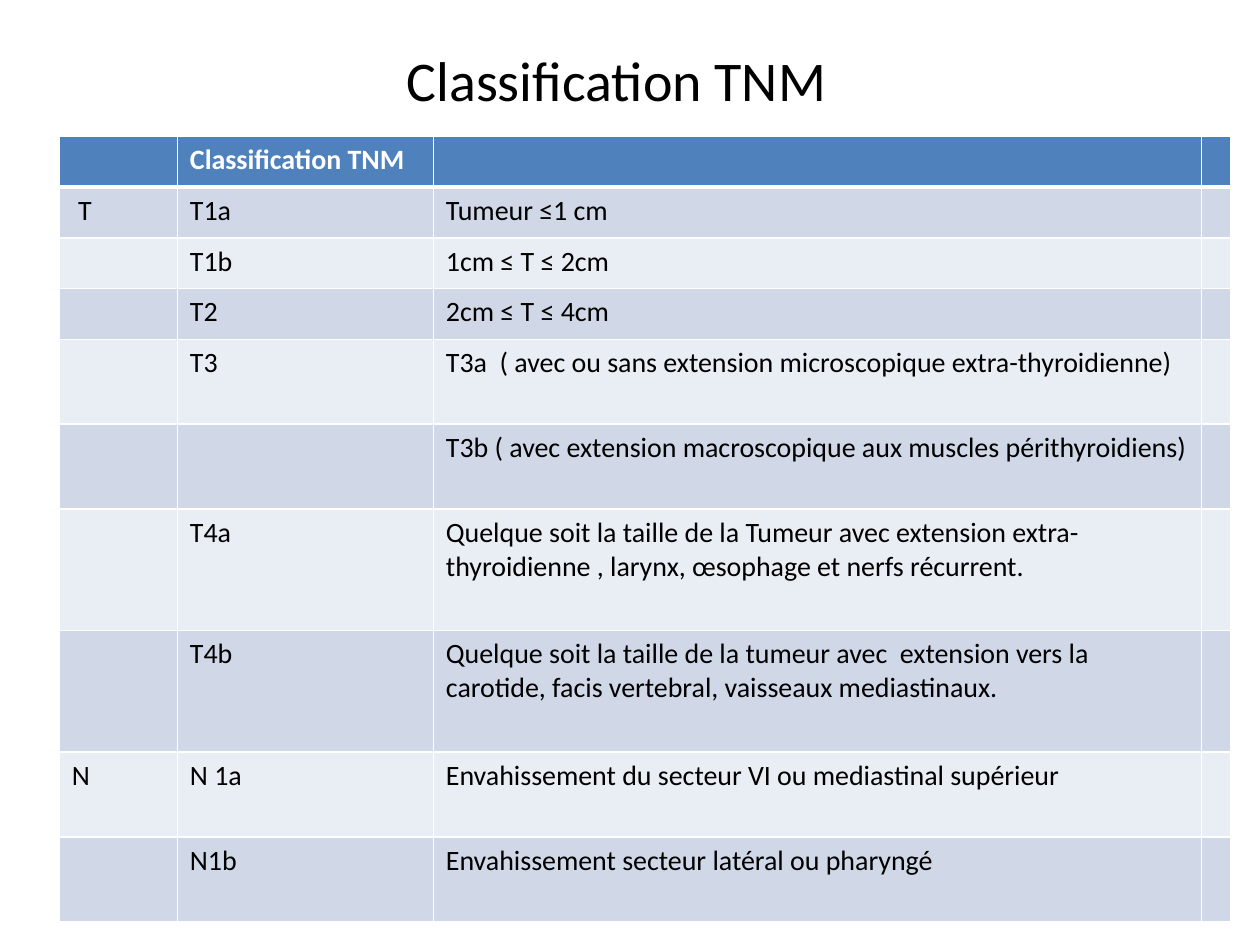
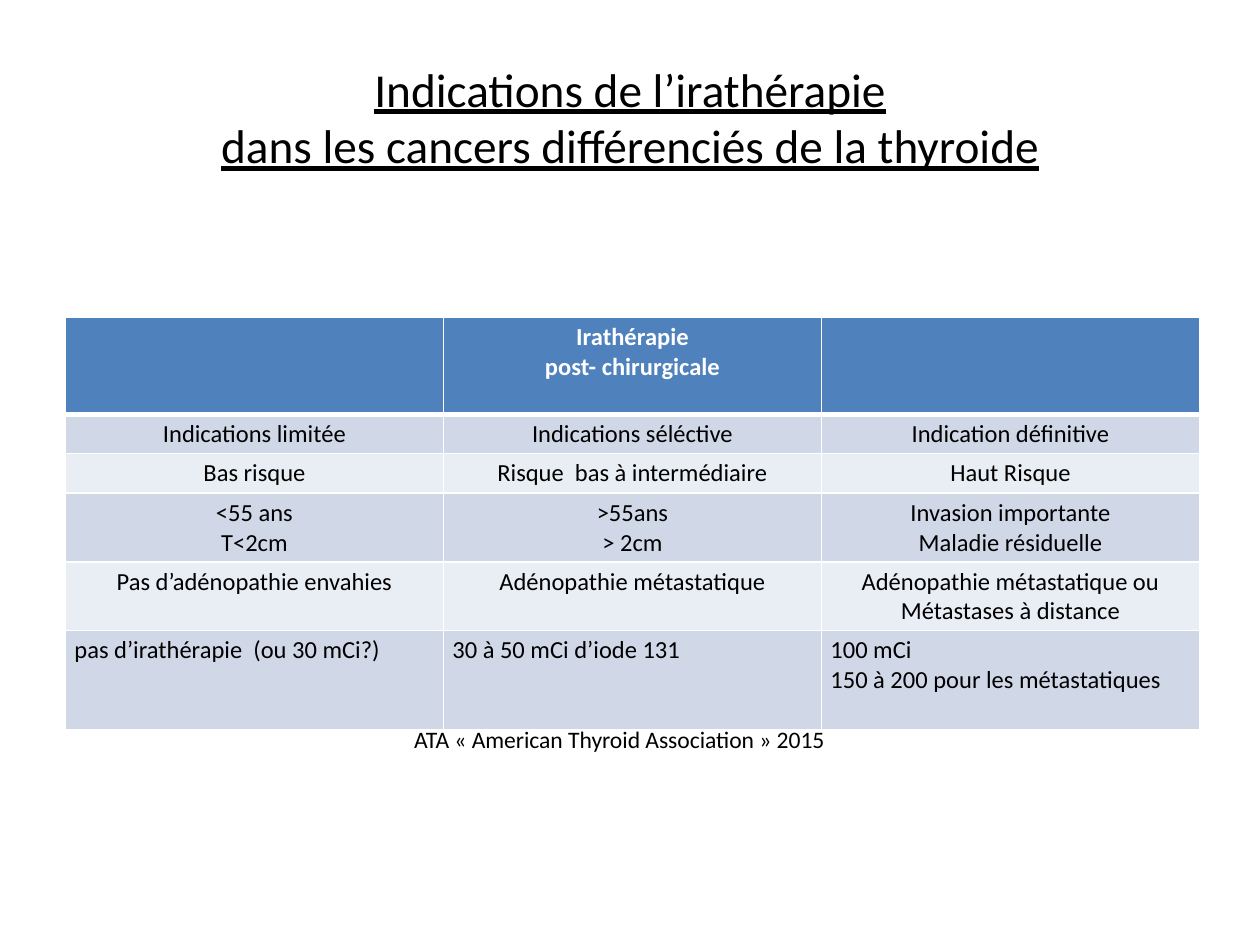
from dataclasses import dataclass

from lxml.etree import SubElement
from pptx import Presentation
from pptx.dml.color import RGBColor
from pptx.enum.text import MSO_ANCHOR, PP_ALIGN
from pptx.oxml.ns import qn
from pptx.util import Cm, Pt


@dataclass(frozen=True)
class Theme:
    font: str = "Calibri"
    ink: str = "000000"
    paper: str = "FFFFFF"
    head: str = "4F81BD"
    bands: tuple = ("D0D8E8", "E9EDF4")
    title: float = 32
    subtitle: float = 27
    stage: float = 16
    dose: float = 14
    source: float = 13.5
    rule: float = 1
    thick: float = 3


THEME = Theme()

STAGES = [
    ["", "Classification TNM", "", ""],
    [" T", "T1a", "Tumeur ≤1 cm", ""],
    ["", "T1b", "1cm ≤ T ≤ 2cm", ""],
    ["", "T2", "2cm ≤ T ≤ 4cm", ""],
    ["", "T3", "T3a  ( avec ou sans extension microscopique "
     "extra-thyroidienne)", ""],
    ["", "", "T3b ( avec extension macroscopique aux muscles "
     "périthyroidiens)", ""],
    ["", "T4a", "Quelque soit la taille de la Tumeur avec extension "
     "extra-thyroidienne , larynx, œsophage et nerfs récurrent.", ""],
    ["", "T4b", "Quelque soit la taille de la tumeur avec  extension vers la "
     "carotide, facis vertebral, vaisseaux mediastinaux.", ""],
    ["N", "N 1a", "Envahissement du secteur VI ou mediastinal supérieur", ""],
    ["", "N1b", "Envahissement secteur latéral ou pharyngé", ""],
]

DOSES = [
    ["", "Irathérapie\npost- chirurgicale", ""],
    ["Indications limitée", "Indications séléctive", "Indication définitive"],
    ["Bas risque", "Risque  bas à intermédiaire", "Haut Risque"],
    ["<55 ans\nT<2cm", ">55ans\n> 2cm",
     "Invasion importante\nMaladie résiduelle"],
    ["Pas d’adénopathie envahies", "Adénopathie métastatique",
     "Adénopathie métastatique ou\nMétastases à distance"],
    ["pas d’irathérapie  (ou 30 mCi?)", "30 à 50 mCi d’iode 131",
     "100 mCi\n150 à 200 pour les métastatiques"],
]


def write(frame, text, size, color=THEME.ink, bold=False, line=False,
          align=PP_ALIGN.LEFT):
    """Fill a text frame: \\n starts a paragraph, \\v breaks a line."""
    frame.text = text
    for para in frame.paragraphs:
        para.alignment = align
        for run in para.runs:
            font = run.font
            font.name, font.size = THEME.font, Pt(size)
            font.bold, font.underline = bold, line
            font.color.rgb = RGBColor.from_string(color)


def add_text(slide, text, left, top, width, height, anchor=MSO_ANCHOR.TOP,
             **style):
    box = slide.shapes.add_textbox(Cm(left), Cm(top), Cm(width), Cm(height))
    box.text_frame.word_wrap = True
    box.text_frame.vertical_anchor = anchor
    write(box.text_frame, text, **style)


def add_title(slide, text, left, top, **style):
    add_text(slide, text, left, top, 22.86, 3.18, anchor=MSO_ANCHOR.MIDDLE,
             align=PP_ALIGN.CENTER, **style)


def edge(cell, side, width):
    props = cell._tc.get_or_add_tcPr()
    rule = SubElement(props, qn(f"a:ln{side}"), w=str(Pt(width)))
    fill = SubElement(rule, qn("a:solidFill"))
    SubElement(fill, qn("a:srgbClr"), val=THEME.paper)


def paint(cell, row):
    """Give a cell its white rules and the fill of its band."""
    for side in "LRTB":
        heavy = (row, side) in ((0, "B"), (1, "T"))
        edge(cell, side, THEME.thick if heavy else THEME.rule)
    cell.fill.solid()
    color = THEME.bands[(row - 1) % 2] if row else THEME.head
    cell.fill.fore_color.rgb = RGBColor.from_string(color)


def add_grid(slide, data, left, top, cols, rows, size, pad, aligns):
    """Add a banded table; pad is (side, top) and aligns has one per row."""
    table = slide.shapes.add_table(
        len(rows), len(cols), Cm(left), Cm(top),
        Cm(sum(cols)), Cm(sum(rows))).table
    for col, width in zip(table.columns, cols):
        col.width = Cm(width)
    for r, (texts, height) in enumerate(zip(data, rows)):
        table.rows[r].height = Cm(height)
        for c, text in enumerate(texts):
            cell = table.cell(r, c)
            cell.margin_left = cell.margin_right = Cm(pad[0])
            cell.margin_top = cell.margin_bottom = Cm(pad[1])
            paint(cell, r)
            if text:
                write(cell.text_frame, text, size, bold=r == 0,
                      color=THEME.ink if r else THEME.paper,
                      align=aligns[r])


def add_stages(slide):
    add_title(slide, "Classification TNM", 1, 0, size=THEME.title)
    rows = [1] * 4 + [1.71] * 2 + [2.45] * 2 + [1.71] * 2
    add_grid(slide, STAGES, 1.2, 2.75, [2.38, 5.16, 15.48, 0.6], rows,
             THEME.stage, (0.25, 0.13), [PP_ALIGN.LEFT] * len(rows))


def add_doses(slide):
    add_title(slide, "Indications de l’irathérapie\v"
              "dans les cancers différenciés de la thyroide",
              1.27, 0.76, size=THEME.subtitle, line=True)
    add_grid(slide, DOSES, 1.32, 6.4, [7.62] * 3,
             [1.95, 0.78, 0.78, 1.37, 1.37, 2], THEME.dose, (0.18, 0.1),
             [PP_ALIGN.CENTER] * 5 + [PP_ALIGN.LEFT])
    add_text(slide, "ATA « American Thyroid Association » 2015",
             8.1, 14.48, 10.21, 0.84, size=THEME.source)


def main():
    deck = Presentation()
    deck.slide_width, deck.slide_height = Cm(25.4), Cm(19.05)
    for build in (add_stages, add_doses):
        build(deck.slides.add_slide(deck.slide_layouts[6]))
    deck.save("out.pptx")


if __name__ == "__main__":
    main()
